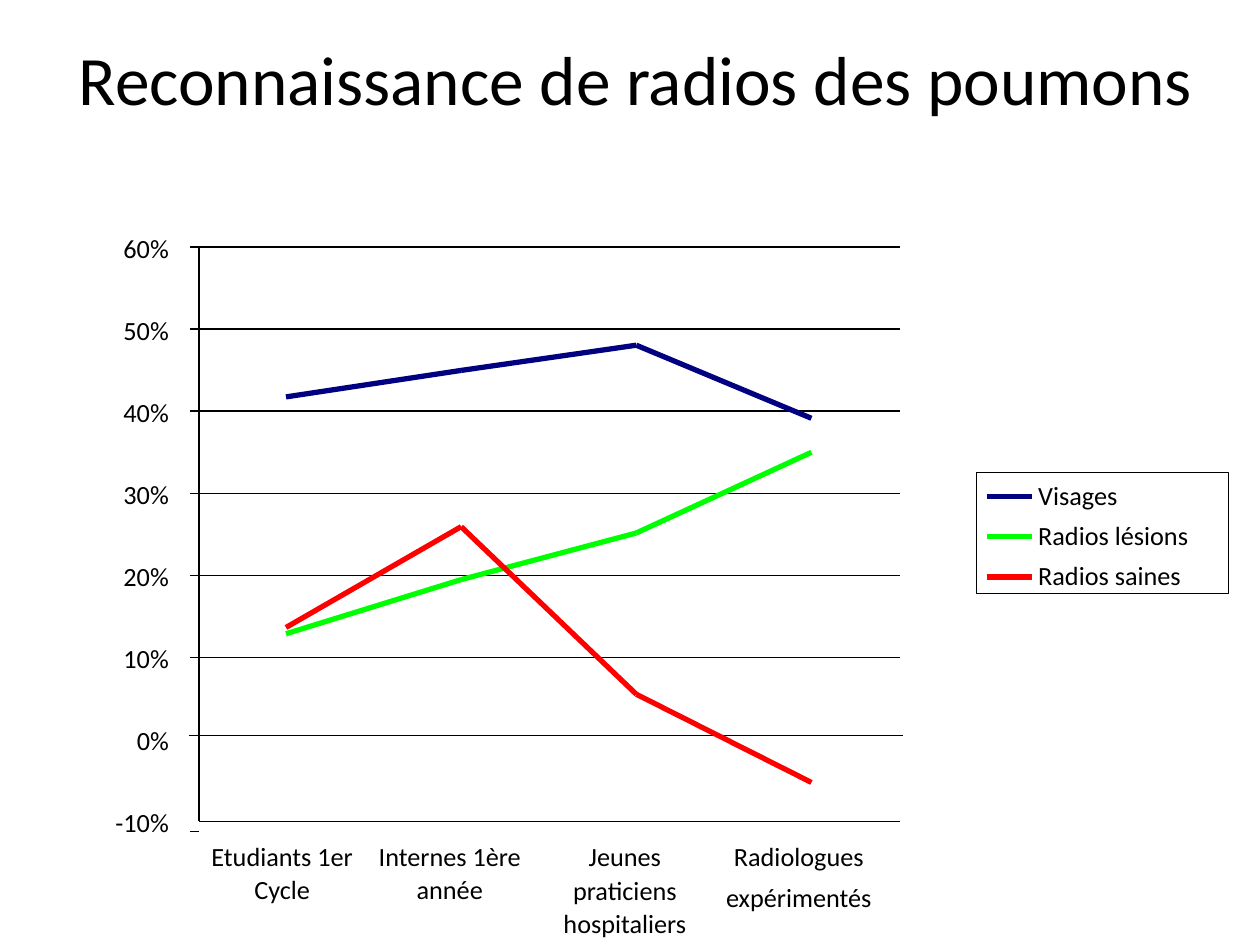
from dataclasses import dataclass
from itertools import pairwise

from lxml.etree import SubElement
from pptx import Presentation
from pptx.dml.color import RGBColor
from pptx.enum.shapes import MSO_CONNECTOR, MSO_SHAPE
from pptx.enum.text import MSO_ANCHOR, PP_ALIGN
from pptx.oxml.ns import qn
from pptx.slide import Slide
from pptx.util import Inches, Pt

FONT = "Calibri"
BLACK = "000000"
WHITE = "FFFFFF"


@dataclass(frozen=True)
class Box:
    left: float
    top: float
    width: float
    height: float

    def lengths(self) -> tuple:
        return tuple(Inches(n) for n in (self.left, self.top, self.width, self.height))


@dataclass(frozen=True)
class Curve:
    name: str
    color: str
    heights: tuple  # vertical position of each point, in inches


@dataclass(frozen=True)
class Group:
    lines: tuple
    center: float
    gap: float  # space between lines, in points


TITLE_BOX = Box(0.42, 0.12, 9.25, 0.99)
LEGEND_BOX = Box(7.75, 3.75, 2, 0.96)
LEGEND_STEP = 0.32

PLOT_LEFT, PLOT_RIGHT = 1.58, 7.14
PLOT_TOP, PLOT_BOTTOM = 1.96, 6.52
TICK_LEFT = 1.51
LAST_TICK = 6.6
ZERO_HEIGHT = 5.84
PERCENTAGES = range(60, -11, -10)
GRID_STEP = (PLOT_BOTTOM - PLOT_TOP) / (len(PERCENTAGES) - 1)
FIRST_POINT, POINT_STEP = 2.27, 1.39

GROUPS = (
    Group(("Etudiants 1er", "Cycle"), 2.24, 0.5),
    Group(("Internes 1ère", "année"), 3.57, 0.5),
    Group(("Jeunes", "praticiens", "hospitaliers"), 4.96, 1.2),
    Group(("Radiologues", "expérimentés"), 6.34, 5.5),
)
CURVES = (
    Curve("Visages", "000080", (3.15, 2.94, 2.74, 3.32)),
    Curve("Radios lésions", "00FF00", (5.03, 4.6, 4.23, 3.59)),
    Curve("Radios saines", "FF0000", (4.98, 4.18, 5.51, 6.21)),
)


def rgb(color: str) -> RGBColor:
    return RGBColor.from_string(color)


def add_text(slide: Slide, lines: tuple, box: Box, *, size: float = 15,
             align=PP_ALIGN.CENTER, anchor=MSO_ANCHOR.TOP, gap: float = 0) -> None:
    frame = slide.shapes.add_textbox(*box.lengths()).text_frame
    frame.margin_left = frame.margin_right = frame.margin_top = frame.margin_bottom = 0
    frame.word_wrap = True
    frame.vertical_anchor = anchor
    for index, line in enumerate(lines):
        paragraph = frame.add_paragraph() if index else frame.paragraphs[0]
        paragraph.alignment = align
        paragraph.space_before = Pt(gap if index else 0)
        run = paragraph.add_run()
        run.text = line
        run.font.name = FONT
        run.font.size = Pt(size)
        run.font.color.rgb = rgb(BLACK)


def add_line(slide: Slide, start: tuple, end: tuple, *,
             color: str = BLACK, width: float = 0.75) -> None:
    points = [Inches(n) for n in (*start, *end)]
    connector = slide.shapes.add_connector(MSO_CONNECTOR.STRAIGHT, *points)
    connector.line.color.rgb = rgb(color)
    connector.line.width = Pt(width)
    SubElement(connector._element.spPr, qn("a:effectLst"))


def draw_axes(slide: Slide) -> None:
    for index, percentage in enumerate(PERCENTAGES):
        height = PLOT_TOP + index * GRID_STEP
        if percentage == 0:
            add_line(slide, (1.5, ZERO_HEIGHT), (7.17, ZERO_HEIGHT))
        else:
            tick = LAST_TICK if percentage < 0 else height
            add_line(slide, (PLOT_LEFT, height), (PLOT_RIGHT, height))
            add_line(slide, (TICK_LEFT, tick), (PLOT_LEFT, tick))
        add_text(slide, (f"{percentage}%",), Box(0.84, height - 0.12, 0.5, 0.25),
                 align=PP_ALIGN.RIGHT)
    add_line(slide, (PLOT_LEFT, PLOT_TOP), (PLOT_LEFT, PLOT_BOTTOM))


def draw_group(slide: Slide, group: Group) -> None:
    box = Box(group.center - 0.65, 6.67, 1.3, 0.26 * len(group.lines))
    add_text(slide, group.lines, box, gap=group.gap)


def draw_curve(slide: Slide, curve: Curve) -> None:
    points = [(FIRST_POINT + index * POINT_STEP, height)
              for index, height in enumerate(curve.heights)]
    for start, end in pairwise(points):
        add_line(slide, start, end, color=curve.color, width=3)


def draw_legend(slide: Slide) -> None:
    frame = slide.shapes.add_shape(MSO_SHAPE.RECTANGLE, *LEGEND_BOX.lengths())
    frame.shadow.inherit = False
    frame.fill.solid()
    frame.fill.fore_color.rgb = rgb(WHITE)
    frame.line.color.rgb = rgb(BLACK)
    frame.line.width = Pt(0.75)
    for index, curve in enumerate(CURVES):
        height = 3.94 + index * LEGEND_STEP
        add_line(slide, (7.83, height), (8.19, height), color=curve.color, width=3)
        add_text(slide, (curve.name,), Box(8.24, height - 0.14, 1.4, 0.25),
                 align=PP_ALIGN.LEFT)


def main() -> None:
    presentation = Presentation()
    presentation.slide_width, presentation.slide_height = Inches(10), Inches(7.5)
    slide = presentation.slides.add_slide(presentation.slide_layouts[6])

    # Title
    add_text(slide, ("Reconnaissance de radios des poumons",), TITLE_BOX,
             size=39.6, anchor=MSO_ANCHOR.MIDDLE)

    # Grid, ticks and percentages
    draw_axes(slide)

    # Recognition rates by level of experience
    for curve in CURVES:
        draw_curve(slide, curve)
    for group in GROUPS:
        draw_group(slide, group)

    # Legend
    draw_legend(slide)

    presentation.save("out.pptx")


if __name__ == "__main__":
    main()
